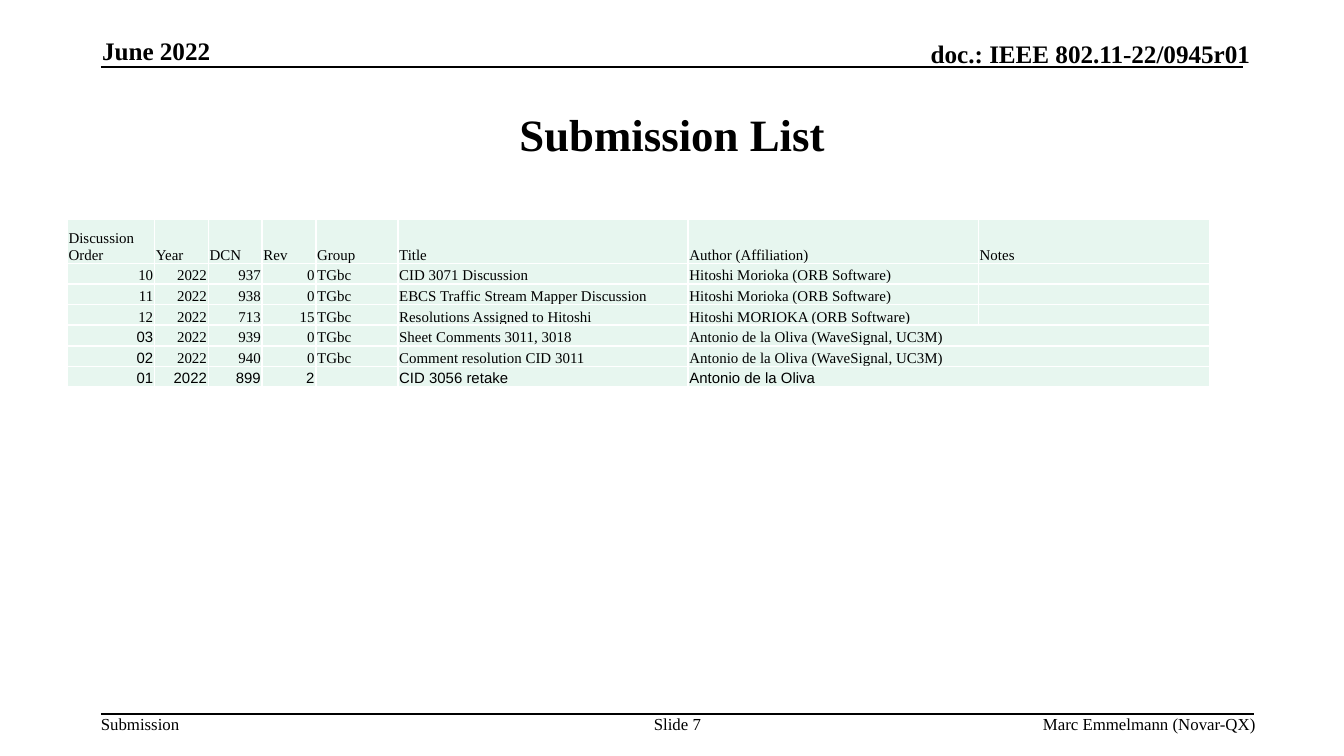
from typing import NamedTuple

from lxml.etree import SubElement
from pptx import Presentation
from pptx.dml.color import RGBColor
from pptx.enum.shapes import MSO_CONNECTOR
from pptx.enum.text import MSO_ANCHOR as Anchor, PP_ALIGN as Align
from pptx.oxml.ns import qn
from pptx.util import Inches, Pt

SERIF, SANS = "Times New Roman", "Arial"
BLACK, WHITE, MINT = "000000", "FFFFFF", "E7F6EF"


class Label(NamedTuple):
    text: str
    left: float
    top: float
    width: float
    height: float
    size: float
    align: Align = Align.LEFT
    anchor: Anchor = Anchor.TOP
    bold: bool = False
    wrap: bool = True


class Submission(NamedTuple):
    order: str
    year: str
    dcn: str
    rev: str
    group: str
    title: str
    author: str
    notes: str = ""


LABELS = [
    Label("June 2022", 0.76, 0.27, 2.05, 0.22, 13.5, Align.LEFT, Anchor.BOTTOM, True),
    Label("doc.: IEEE 802.11-22/0945r01", 5.47, 0.29, 3.83, 0.22, 13.5,
          Align.RIGHT, Anchor.BOTTOM, True),
    Label("Submission List", 0.75, 0.56, 8.5, 0.87, 24, Align.CENTER, Anchor.MIDDLE, True),
    Label("Submission", 0.75, 5.31, 0.59, 0.15, 9, wrap=False),
    Label("Slide 7", 4.75, 5.31, 0.58, 0.3, 9, Align.CENTER),
    Label("Marc Emmelmann (Novar-QX)", 5.86, 5.31, 3.48, 0.15, 9, Align.RIGHT),
]

HEADINGS = Submission("Discussion Order", "Year", "DCN", "Rev", "Group", "Title",
                      "Author (Affiliation)", "Notes")
SUBMISSIONS = [
    Submission("10", "2022", "937", "0", "TGbc", "CID 3071 Discussion",
               "Hitoshi Morioka (ORB Software)"),
    Submission("11", "2022", "938", "0", "TGbc", "EBCS Traffic Stream Mapper Discussion",
               "Hitoshi Morioka (ORB Software)"),
    Submission("12", "2022", "713", "15", "TGbc", "Resolutions Assigned to Hitoshi",
               "Hitoshi MORIOKA (ORB Software)"),
    Submission("03", "2022", "939", "0", "TGbc", "Sheet Comments 3011, 3018",
               "Antonio de la Oliva (WaveSignal, UC3M)"),
    Submission("02", "2022", "940", "0", "TGbc", "Comment resolution CID 3011",
               "Antonio de la Oliva (WaveSignal, UC3M)"),
    Submission("01", "2022", "899", "2", "", "CID 3056 retake", "Antonio de la Oliva"),
]
COLUMN_WIDTHS = [0.65, 0.4, 0.4, 0.4, 0.61, 2.16, 2.16, 1.72]
NUMBER_COLUMNS = 4
AUTHOR_COLUMN, NOTES_COLUMN = 6, 7
FIRST_MERGED_ROW = 4
TABLE_HEIGHT, HEADING_HEIGHT = 1.25, 0.33


def rgb(value: str) -> RGBColor:
    return RGBColor.from_string(value)


def style(paragraph, size: float, font: str = SERIF, bold: bool = False) -> None:
    paragraph.font.size = Pt(size)
    paragraph.font.name = font
    paragraph.font.bold = bold
    paragraph.font.color.rgb = rgb(BLACK)


def draw_rule(slide, y: float, right: float) -> None:
    rule = slide.shapes.add_connector(MSO_CONNECTOR.STRAIGHT, Inches(0.75), Inches(y),
                                      Inches(right), Inches(y))
    rule.line.color.rgb = rgb(BLACK)
    rule.line.width = Pt(1)
    SubElement(rule._element.spPr, qn("a:effectLst"))


def draw_label(slide, label: Label) -> None:
    box = slide.shapes.add_textbox(Inches(label.left), Inches(label.top),
                                   Inches(label.width), Inches(label.height))
    frame = box.text_frame
    frame.word_wrap = label.wrap
    frame.vertical_anchor = label.anchor
    frame.margin_left = frame.margin_right = frame.margin_top = frame.margin_bottom = 0
    paragraph = frame.paragraphs[0]
    paragraph.text = label.text
    paragraph.alignment = label.align
    style(paragraph, label.size, bold=label.bold)


def draw_borders(cell) -> None:
    properties = cell._tc.get_or_add_tcPr()
    for side in ("lnL", "lnR", "lnT", "lnB"):
        border = SubElement(properties, qn(f"a:{side}"), w=str(Pt(1)))
        fill = SubElement(border, qn("a:solidFill"))
        SubElement(fill, qn("a:srgbClr"), val=WHITE)


def fill_cell(cell, text: str, font: str, align: Align) -> None:
    draw_borders(cell)
    cell.fill.solid()
    cell.fill.fore_color.rgb = rgb(MINT)
    cell.margin_left = cell.margin_right = cell.margin_top = Inches(0.01)
    cell.margin_bottom = 0
    cell.vertical_anchor = Anchor.BOTTOM
    paragraph = cell.text_frame.paragraphs[0]
    paragraph.alignment = align
    style(paragraph, 8, font)
    if text:
        paragraph.text = text
    else:
        # Keep empty cells from stretching their row
        SubElement(paragraph._p, qn("a:endParaRPr"), sz="800")


def draw_submissions(slide) -> None:
    rows = [HEADINGS, *SUBMISSIONS]
    table = slide.shapes.add_table(len(rows), len(COLUMN_WIDTHS), Inches(0.5), Inches(1.63),
                                   Inches(8.5), Inches(TABLE_HEIGHT)).table
    table.first_row = table.horz_banding = False
    for column, width in zip(table.columns, COLUMN_WIDTHS):
        column.width = Inches(width)
    row_height = (TABLE_HEIGHT - HEADING_HEIGHT) / len(SUBMISSIONS)
    for r, entry in enumerate(rows):
        table.rows[r].height = Inches(row_height if r else HEADING_HEIGHT)
        for c, text in enumerate(entry):
            last_row = r == len(rows) - 1
            sans = last_row or (r >= FIRST_MERGED_ROW and c == 0)
            align = Align.RIGHT if r and c < NUMBER_COLUMNS else Align.LEFT
            fill_cell(table.cell(r, c), text, SANS if sans else SERIF, align)
        if r >= FIRST_MERGED_ROW:
            table.cell(r, AUTHOR_COLUMN).merge(table.cell(r, NOTES_COLUMN))


def main() -> None:
    deck = Presentation()
    # Widescreen, 16 to 9
    deck.slide_width = Inches(10)
    deck.slide_height = Inches(10) * 9 // 16
    slide = deck.slides.add_slide(deck.slide_layouts[6])

    # Header and footer rules
    draw_rule(slide, 0.5, 9.25)
    draw_rule(slide, 5.31, 9.33)

    # Header, title and footer text
    for label in LABELS:
        draw_label(slide, label)

    # Submission table
    draw_submissions(slide)
    deck.save("out.pptx")


if __name__ == "__main__":
    main()
